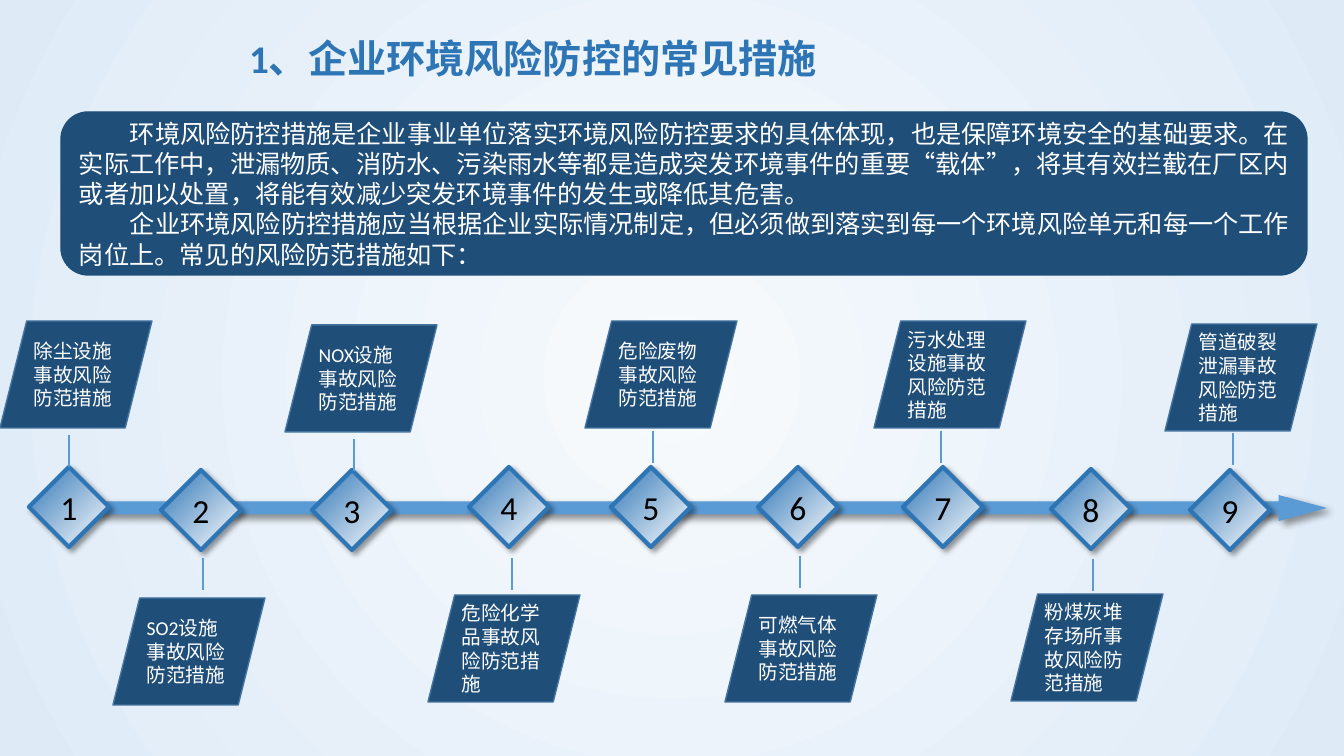
"""Build a slide with a nine-step timeline of enterprise environmental risk measures."""
import pptx
import pptx.util
import pptx.dml.color
import pptx.enum.lang
import pptx.enum.shapes
import pptx.enum.text
import pptx.oxml
import pptx.oxml.ns

PX = 914400 / 100.8
RGBColor = pptx.dml.color.RGBColor
NAVY = RGBColor(0x1F, 0x4E, 0x79)
CARD_EDGE = RGBColor(0x43, 0x73, 0x9E)
BLUE = RGBColor(0x2E, 0x75, 0xB6)
SKY = RGBColor(0x5B, 0x9B, 0xD5)
WHITE = RGBColor(0xFF, 0xFF, 0xFF)
BLACK = RGBColor(0x00, 0x00, 0x00)
GLOW = RGBColor(0xF7, 0xFA, 0xFD)
PALE = RGBColor(0xDE, 0xEB, 0xF7)
MSO_SHAPE = pptx.enum.shapes.MSO_SHAPE
PP_ALIGN = pptx.enum.text.PP_ALIGN
MSO_ANCHOR = pptx.enum.text.MSO_ANCHOR
CHINESE = pptx.enum.lang.MSO_LANGUAGE_ID.SIMPLIFIED_CHINESE
NS = pptx.oxml.ns.nsdecls("a")


def px(*lengths):
    return [round(length * PX) for length in lengths]


def write(shape, text, size=14, color=WHITE, bold=False, align=PP_ALIGN.LEFT,
          anchor=MSO_ANCHOR.MIDDLE, indent=0):
    frame = shape.text_frame
    frame.word_wrap = True
    frame.auto_size = pptx.enum.text.MSO_AUTO_SIZE.NONE
    frame.vertical_anchor = anchor
    frame.text = text
    for paragraph in frame.paragraphs:
        paragraph.alignment = align
        if indent:
            paragraph._p.get_or_add_pPr().set("indent", str(px(indent)[0]))
        font = paragraph.runs[0].font
        font.name = "Calibri"
        font.size = pptx.util.Pt(size)
        font.bold = bold
        font.color.rgb = color
        font.language_id = CHINESE


presentation = pptx.Presentation()
presentation.slide_width, presentation.slide_height = px(1344, 756)
slide = presentation.slides.add_slide(presentation.slide_layouts[5])
shapes = slide.shapes

backdrop = slide.background.fill
backdrop.gradient()
for stop, color in zip(backdrop.gradient_stops, (GLOW, PALE)):
    stop.color.rgb = color
gradient = slide.element.find(".//" + pptx.oxml.ns.qn("a:gradFill"))
gradient.replace(gradient.find(pptx.oxml.ns.qn("a:lin")), pptx.oxml.parse_xml(
    f'<a:path {NS} path="circle">'
    '<a:fillToRect l="50000" t="50000" r="50000" b="50000"/></a:path>'))

heading = shapes.title
heading.left, heading.top, heading.width, heading.height = px(239, 29, 799, 57)
write(heading, "1、企业环境风险防控的常见措施", size=28, color=BLUE, bold=True,
      anchor=MSO_ANCHOR.TOP)

timeline = shapes.add_shape(MSO_SHAPE.RIGHT_ARROW, *px(39, 495, 1288, 26))
timeline.adjustments[0] = 0.5
timeline.adjustments[1] = 1.86
timeline.fill.solid()
timeline.fill.fore_color.rgb = SKY
timeline.line.fill.background()
shadowed = [timeline]

introduction = shapes.add_shape(MSO_SHAPE.ROUNDED_RECTANGLE, *px(61, 112, 1246, 163))
introduction.shadow.inherit = False
introduction.fill.solid()
introduction.fill.fore_color.rgb = NAVY
introduction.line.color.rgb = NAVY
introduction.line.width = pptx.util.Pt(1)
write(introduction,
      "环境风险防控措施是企业事业单位落实环境风险防控要求的具体体现，也是保障环境安全的基础要求。"
      "在实际工作中，泄漏物质、消防水、污染雨水等都是造成突发环境事件的重要“载体”，"
      "将其有效拦截在厂区内或者加以处置，将能有效减少突发环境事件的发生或降低其危害。\n"
      "企业环境风险防控措施应当根据企业实际情况制定，但必须做到落实到每一个环境风险单元"
      "和每一个工作岗位上。常见的风险防范措施如下：",
      size=18, indent=51)

DIAMOND = 80
STEM = 32
CARD = (152, 107)
MEASURES = [
    ("除尘设施事故风险防范措施", (29, 467), (69, 435), (0, 321)),
    ("SO2设施事故风险防范措施", (161, 470), (203, 558), (113, 598)),
    ("NOX设施事故风险防范措施", (312, 470), (354, 439), (285, 325)),
    ("危险化学品事故风险防范措施", (469, 467), (512, 558), (428, 595)),
    ("危险废物事故风险防范措施", (611, 467), (653, 431), (585, 321)),
    ("可燃气体事故风险防范措施", (758, 467), (800, 556), (725, 595)),
    ("污水处理设施事故风险防范措施", (903, 467), (941, 431), (874, 321)),
    ("粉煤灰堆存场所事故风险防范措施", (1051, 469), (1093, 559), (1011, 594)),
    ("管道破裂泄漏事故风险防范措施", (1190, 470), (1233, 433), (1165, 324)),
]

for number, (measure, (left, top), (stem_x, stem_y), corner) in enumerate(MEASURES, 1):
    marker = shapes.add_shape(MSO_SHAPE.DIAMOND, *px(left, top, DIAMOND, DIAMOND))
    marker.fill.gradient()
    marker.fill.gradient_angle = 315
    for stop, color, position in zip(marker.fill.gradient_stops, (BLUE, WHITE), (0, 1)):
        stop.color.rgb = color
        stop.position = position
    marker.line.color.rgb = BLUE
    marker.line.width = pptx.util.Pt(3)
    write(marker, str(number), size=24, color=BLACK, align=PP_ALIGN.CENTER)
    shadowed.append(marker)

    stem = shapes.add_connector(pptx.enum.shapes.MSO_CONNECTOR.STRAIGHT,
                                *px(stem_x, stem_y, stem_x, stem_y + STEM))
    stem.line.color.rgb = SKY
    stem.line.width = pptx.util.Pt(1.5)
    stem._element.spPr.append(pptx.oxml.parse_xml(f"<a:effectLst {NS}/>"))
    if (stem_x, stem_y + STEM) == (left + DIAMOND // 2, top):
        stem.end_connect(marker, 0)

    card = shapes.add_shape(MSO_SHAPE.PARALLELOGRAM, *px(*corner, *CARD))
    card.shadow.inherit = False
    card.fill.solid()
    card.fill.fore_color.rgb = NAVY
    card.line.color.rgb = CARD_EDGE
    card.line.width = pptx.util.Pt(1)
    write(card, measure)

for shape in shadowed:
    shape.shadow.inherit = False
    effects = shape._element.spPr.find(pptx.oxml.ns.qn("a:effectLst"))
    effects.append(pptx.oxml.parse_xml(
        f'<a:outerShdw {NS} blurRad="50800" dist="38100" dir="2700000" rotWithShape="0">'
        '<a:srgbClr val="000000"><a:alpha val="40000"/></a:srgbClr></a:outerShdw>'))

presentation.save("out.pptx")
